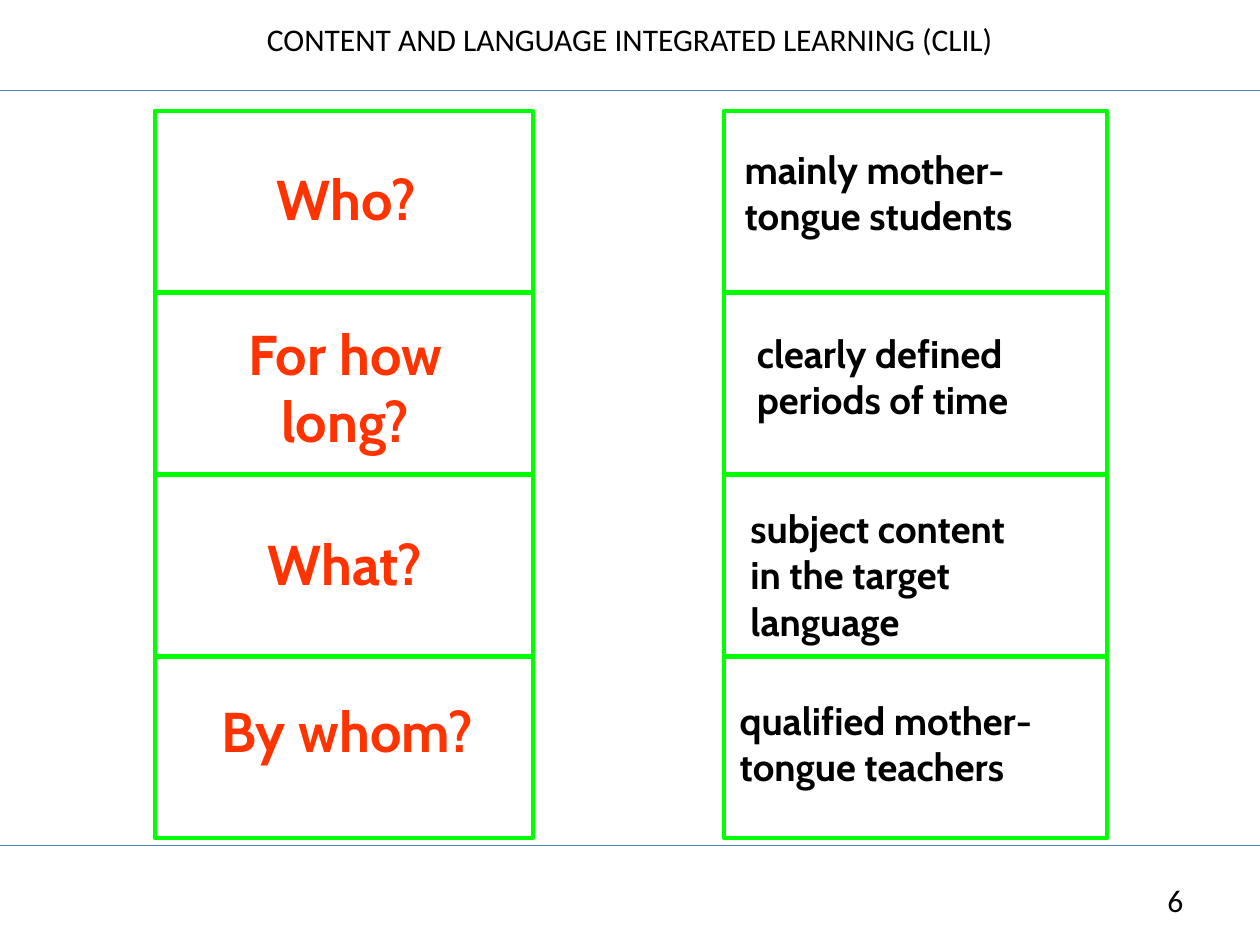
import pptx
import pptx.util
import pptx.dml.color
import pptx.enum.shapes
import pptx.enum.text
from lxml import etree

Cm, Pt = pptx.util.Cm, pptx.util.Pt
RGB = pptx.dml.color.RGBColor.from_string
ALIGN = pptx.enum.text.PP_ALIGN

THEME = {
    "rule": RGB("4B7EBC"),
    "frame": RGB("00FF00"),
    # font, size, bold, colour, alignment
    "head": ("Calibri", 18, False, RGB("000000"), ALIGN.CENTER),
    "ask": ("Cabin", 32, True, RGB("FF3300"), ALIGN.CENTER),
    "reply": ("Cabin", 22, True, RGB("000000"), ALIGN.LEFT),
}


def write(box, text, style):
    name, size, bold, tint, align = THEME[style]
    frame = box.text_frame
    frame.text = text
    frame.word_wrap = True
    frame.auto_size = pptx.enum.text.MSO_AUTO_SIZE.NONE
    frame.vertical_anchor = pptx.enum.text.MSO_ANCHOR.TOP
    for par in frame.paragraphs:
        par.alignment = align
        par.space_before = Pt(0)
        par.font.name = name
        par.font.size = Pt(size)
        par.font.bold = bold
        par.font.color.rgb = tint


deck = pptx.Presentation()
deck.slide_width, deck.slide_height = Cm(25.4), Cm(19.05)
slide = deck.slides.add_slide(deck.slide_layouts[5])
shapes = slide.shapes

# Title
title = shapes.title
title.left, title.top = Cm(4.09), Cm(0.28)
title.width, title.height = Cm(17.22), Cm(1.02)
write(title, "CONTENT AND LANGUAGE INTEGRATED LEARNING (CLIL)", "head")

# Page number
page = shapes.add_textbox(Cm(22.07), Cm(17.63), Cm(3.25), Cm(1.02))
write(page, "6", "head")

# Rules under the title and above the footer
for y in (1.83, 17.04):
    rule = shapes.add_connector(
        pptx.enum.shapes.MSO_CONNECTOR.STRAIGHT, 0, Cm(y), Cm(25.4), Cm(y))
    rule.line.color.rgb = THEME["rule"]
    rule.line.width = Pt(0.75)
    etree.SubElement(rule.element.spPr, pptx.oxml.ns.qn("a:effectLst"))

# Columns: style, frame left, frame width, then text, left, top, height
columns = [
    ("ask", 3.12, 7.62, [
        ("Who?", 3.53, 3.2, 1.6),
        ("For how long?", 3.51, 6.32, 2.97),
        ("What?", 3.51, 10.54, 1.6),
        ("By whom?", 3.56, 13.92, 1.6),
    ]),
    ("reply", 14.6, 7.72, [
        ("mainly mother-\ntongue students", 14.76, 2.82, 2.11),
        ("clearly defined\nperiods of time", 15.01, 6.53, 2.11),
        ("subject content\nin the target\nlanguage", 14.88, 10.06, 3.07),
        ("qualified mother-\ntongue teachers", 14.66, 13.92, 2.11),
    ]),
]
for style, left, width, cells in columns:
    for row, (text, x, y, height) in enumerate(cells):
        cell = shapes.add_shape(
            pptx.enum.shapes.MSO_SHAPE.RECTANGLE,
            Cm(left), Cm(2.23 + 3.67 * row), Cm(width), Cm(3.66))
        cell.shadow.inherit = False
        cell.fill.background()
        cell.line.color.rgb = THEME["frame"]
        cell.line.width = Pt(2.25)
        label = shapes.add_textbox(Cm(x), Cm(y), Cm(6.9), Cm(height))
        write(label, text, style)

deck.save("out.pptx")
